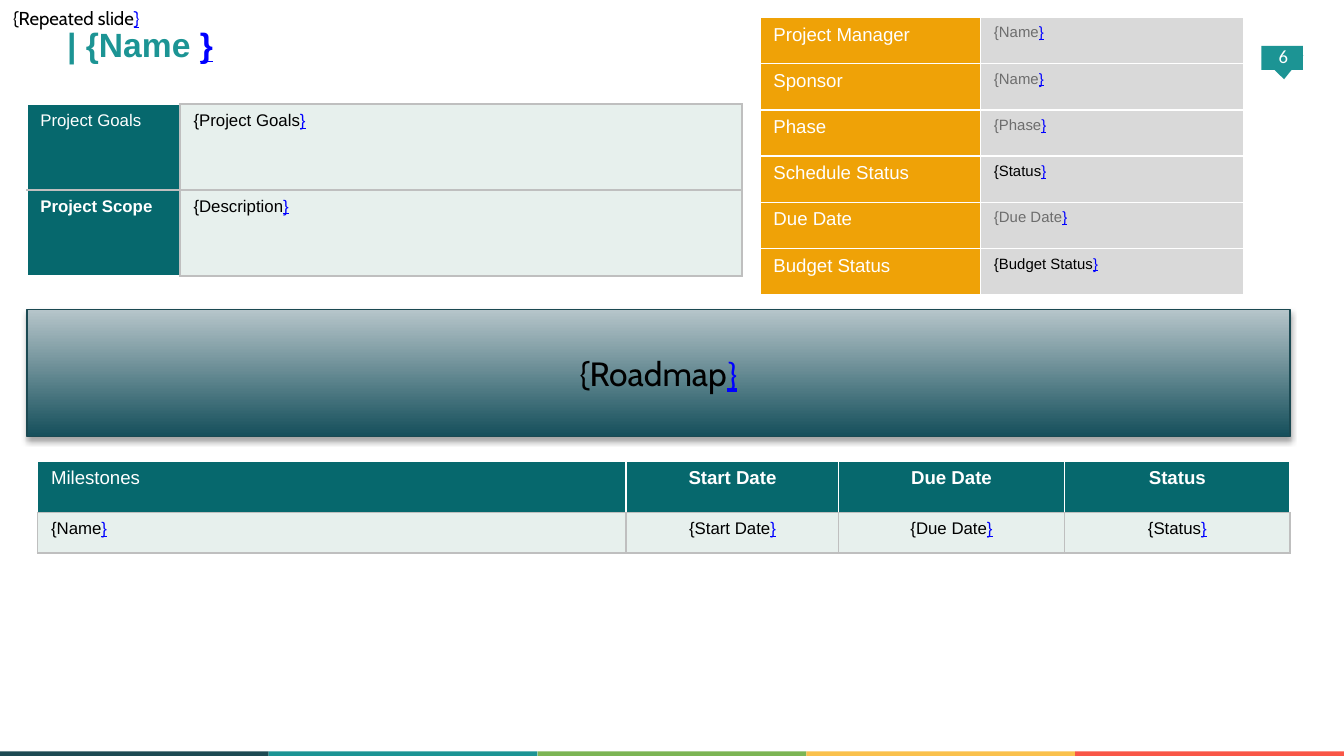
from dataclasses import dataclass

from lxml.etree import SubElement
from pptx import Presentation
from pptx.dml.color import RGBColor
from pptx.enum.shapes import MSO_SHAPE as SHAPE
from pptx.enum.text import MSO_ANCHOR as ANCHOR, MSO_AUTO_SIZE as AUTO, PP_ALIGN as ALIGN
from pptx.oxml.ns import qn
from pptx.util import Inches, Pt


@dataclass(frozen=True)
class Theme:
    teal: str = "1C9494"
    deep: str = "06686D"
    mint: str = "E7F0ED"
    amber: str = "EFA207"
    pale: str = "D9D9D9"
    edge: str = "BFBFBF"
    muted: str = "6D6D6D"
    black: str = "000000"
    white: str = "FFFFFF"
    link: str = "0000FF"
    outline: str = "1B4952"
    gradient: tuple = ("154F5B", "B6C5CA")
    stripes: tuple = ("1D4A53", "1C9494", "7CB554", "FAC14D", "F95647")
    body: str = "Arial"
    accent: str = "Cabin"
    plain: str = "Calibri"
    title: int = 18
    label: int = 10
    text: int = 9
    small: int = 8


@dataclass(frozen=True)
class Box:
    """A rectangle in grid units; the slide is 100 columns wide and cells are square."""
    x: float
    y: float
    w: float
    h: float

    def inside(self, x, y, w, h):
        """The part of this box given by shares of its size."""
        return Box(self.x + x * self.w, self.y + y * self.h, w * self.w, h * self.h)

    def emu(self):
        return [unit(v) for v in (self.x, self.y, self.w, self.h)]


T = Theme()
WIDTH = 10
HEIGHT = WIDTH * 9 / 16


def unit(n):
    return Inches(n * WIDTH / 100)


def rgb(color):
    return RGBColor.from_string(color)


def add_run(p, text, size, color, font=T.body, bold=False, underline=False):
    r = p.add_run()
    r.text = text
    f = r.font
    f.size, f.name, f.bold, f.underline = Pt(size), font, bold, underline
    f.color.rgb = rgb(color)


def write(tf, text, size, color, font=T.body, bold=False, align=ALIGN.LEFT, brace_font=None):
    """Write one paragraph; a closing brace is set as an underlined link-coloured run."""
    p = tf.paragraphs[0]
    p.alignment = align
    add_run(p, text.removesuffix("}"), size, color, font, bold)
    if text.endswith("}"):
        add_run(p, "}", size, T.link, brace_font or font, bold, True)


def add_block(s, kind, box, fill):
    sp = s.shapes.add_shape(kind, *box.emu())
    sp.shadow.inherit = False
    sp.fill.solid()
    sp.fill.fore_color.rgb = rgb(fill)
    sp.line.fill.background()
    return sp


def add_text_box(s, box, margins=(0.1, 0.05, 0.1, 0.05), wrap=True):
    tf = s.shapes.add_textbox(*box.emu()).text_frame
    tf.margin_left, tf.margin_top, tf.margin_right, tf.margin_bottom = map(Inches, margins)
    tf.word_wrap = wrap
    return tf


def add_grid(s, box, cols, rows):
    """Add a table whose columns and rows share the box in the given proportions."""
    table = s.shapes.add_table(len(rows), len(cols), *box.emu()).table
    for col, share in zip(table.columns, cols):
        col.width = unit(box.w * share / sum(cols))
    for row, share in zip(table.rows, rows):
        row.height = unit(box.h * share / sum(rows))
    return table


def set_cell(cell, text, fill, borders, **style):
    """Fill a cell; borders are the left, right, top and bottom colours."""
    write(cell.text_frame, text, **style)
    tc_pr = cell._tc.get_or_add_tcPr()
    for side, color in zip("LRTB", borders):
        ln = SubElement(tc_pr, qn(f"a:ln{side}"), w=str(Pt(1)))
        SubElement(SubElement(ln, qn("a:solidFill")), qn("a:srgbClr"), val=color)
    cell.fill.solid()
    cell.fill.fore_color.rgb = rgb(fill)


def footer_stripes(s, box):
    share = 1 / len(T.stripes)
    for i, color in enumerate(T.stripes):
        add_block(s, SHAPE.RECTANGLE, box.inside(i * share, 0, share, 1), color)


def page_badge(s, box, number):
    add_block(s, SHAPE.RECTANGLE, box.inside(0, 0.14, 1, 0.62), T.teal)
    add_block(s, SHAPE.ISOSCELES_TRIANGLE, box.inside(0.03, 0.41, 1, 0.59), T.teal).rotation = 176.8
    tf = add_text_box(s, box.inside(0.06, 0, 0.94, 1), (0, 0, 0, 0.05))
    tf.vertical_anchor = ANCHOR.MIDDLE
    write(tf, number, T.label, T.white, T.plain, align=ALIGN.CENTER)


def title(s, box, text):
    write(add_text_box(s, box, (0, 0, 0.1, 0)), text, T.title, T.teal, bold=True)


def repeat_tag(s, box, text):
    tf = add_text_box(s, box, wrap=False)
    tf.auto_size = AUTO.SHAPE_TO_FIT_TEXT
    write(tf, text, T.label, T.black, T.accent)


def summary_table(s, box, entries):
    table = add_grid(s, box, (1.14, 4.18), [1] * len(entries))
    last = len(entries) - 1
    for i, (label, value) in enumerate(entries):
        edges = (T.white, T.edge, T.edge if i else T.white, T.white if i == last else T.edge)
        set_cell(table.cell(i, 0), label, T.deep, edges, size=T.text, color=T.white, bold=i > 0)
        set_cell(table.cell(i, 1), value, T.mint, [T.edge] * 4, size=T.text, color=T.black)


def facts_table(s, box, entries):
    table = add_grid(s, box, (1.64, 1.96), [1] * len(entries))
    edges = [T.white] * 4
    for i, (label, value) in enumerate(entries):
        color = T.black if "Status" in label else T.muted
        set_cell(table.cell(i, 0), label, T.amber, edges, size=T.label, color=T.white)
        set_cell(table.cell(i, 1), value, T.pale, edges, size=T.small, color=color)


def milestone_table(s, box, entries):
    table = add_grid(s, box, (4.38, 1.58, 1.68, 1.68), (0.38, 0.3))
    head_edges = (T.white, T.white, T.white, T.edge)
    for j, (head, value) in enumerate(entries):
        align = ALIGN.CENTER if j else ALIGN.LEFT
        set_cell(table.cell(0, j), head, T.deep, head_edges,
                 size=T.label, color=T.white, bold=j > 0, align=align)
        set_cell(table.cell(1, j), value, T.mint, [T.edge] * 4,
                 size=T.text, color=T.black, align=align)


def roadmap_panel(s, box, text):
    sp = add_block(s, SHAPE.RECTANGLE, box, T.gradient[0])
    sp.fill.gradient()
    sp.fill.gradient_angle = 90
    for stop, color, position in zip(sp.fill.gradient_stops, T.gradient, (0, 1)):
        stop.color.rgb = rgb(color)
        stop.position = position
    sp.line.color.rgb = rgb(T.outline)
    sp.line.width = Pt(0.75)
    effects = sp._element.spPr.find(qn("a:effectLst"))
    shadow = SubElement(effects, qn("a:outerShdw"), blurRad=str(Pt(3.1)), dist=str(Pt(1.8)),
                        dir="5400000", rotWithShape="0")
    SubElement(SubElement(shadow, qn("a:srgbClr"), val=T.black), qn("a:alpha"), val="35000")
    tf = sp.text_frame
    tf.vertical_anchor = ANCHOR.MIDDLE
    write(tf, text, T.title, T.black, T.accent, align=ALIGN.CENTER, brace_font=T.plain)


def project_slide(prs):
    s = prs.slides.add_slide(prs.slide_layouts[6])
    footer_stripes(s, Box(0, 55.9, 100, 0.8))
    page_badge(s, Box(93.85, 3, 3.1, 2.9), "6")
    title(s, Box(5, 1.8, 75.1, 4), "| {Name }")
    summary_table(s, Box(2, 7.75, 53.2, 12.8), [
        ("Project Goals", "{Project Goals}"), ("Project Scope", "{Description}")])
    facts_table(s, Box(56.55, 1.3, 36, 20.65), [
        ("Project Manager", "{Name}"), ("Sponsor", "{Name}"), ("Phase", "{Phase}"),
        ("Schedule Status", "{Status}"), ("Due Date", "{Due Date}"),
        ("Budget Status", "{Budget Status}")])
    milestone_table(s, Box(2.8, 34.33, 93.2, 6.8), [
        ("Milestones", "{Name}"), ("Start Date", "{Start Date}"),
        ("Due Date", "{Due Date}"), ("Status", "{Status}")])
    repeat_tag(s, Box(0, 0, 12.4, 2.8), "{Repeated slide}")
    roadmap_panel(s, Box(2, 23.03, 94, 9.45), "{Roadmap}")


def main():
    prs = Presentation()
    prs.slide_width, prs.slide_height = Inches(WIDTH), Inches(HEIGHT)
    project_slide(prs)
    prs.save("out.pptx")


if __name__ == "__main__":
    main()
